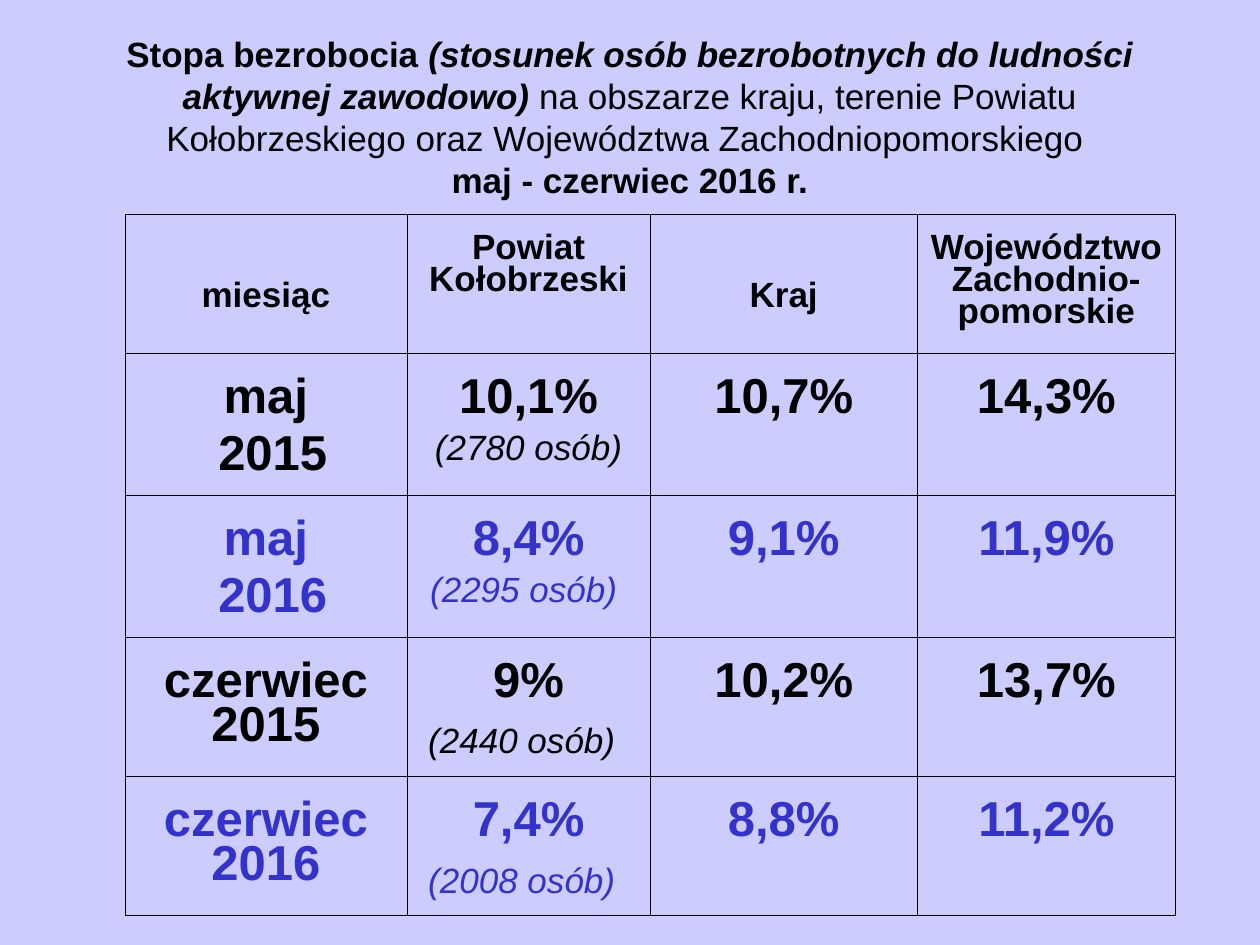
from dataclasses import dataclass

from lxml.etree import SubElement
from pptx import Presentation
from pptx.dml.color import RGBColor
from pptx.enum.text import MSO_ANCHOR, PP_ALIGN
from pptx.oxml.ns import qn
from pptx.util import Inches, Pt


@dataclass(frozen=True)
class Theme:
    font: str = "Arial"
    background: str = "CCCCFF"
    ink: str = "000000"
    accent: str = "3333CC"
    small: int = 20
    large: int = 28
    border: float = 0.25
    line_spacing: float = 0.81


@dataclass(frozen=True)
class Piece:
    text: str
    size: int
    bold: bool = True
    italic: bool = False


THEME = Theme()
WIDTH, HEIGHT = Inches(10), Inches(7.5)
COLUMN_SHARES = [0.224, 0.193, 0.212, 0.205]
ROW_SHARES = [0.147, 0.15, 0.15, 0.141, 0.141]
HEADER_TOP, LOWERED_HEADER_TOP, DATA_TOP = 0.16, 0.54, 0.2

TITLE = [
    Piece("Stopa bezrobocia ", THEME.small),
    Piece("(stosunek osób bezrobotnych do ludności aktywnej zawodowo)",
          THEME.small, italic=True),
    Piece(" na obszarze kraju, terenie Powiatu Kołobrzeskiego oraz "
          "Województwa Zachodniopomorskiego ", THEME.small, bold=False),
]
PERIOD = Piece("maj - czerwiec 2016 r.", THEME.small)

HEADERS = [
    ("miesiąc", LOWERED_HEADER_TOP),
    ("Powiat Kołobrzeski", HEADER_TOP),
    ("Kraj", LOWERED_HEADER_TOP),
    ("Województwo Zachodnio-pomorskie", HEADER_TOP),
]


def figure(text):
    return Piece(text, THEME.large)


def people(text):
    return Piece(text, THEME.small, bold=False, italic=True)


LARGE_SPACE = Piece(" ", THEME.large, bold=False)
MONTHS = [
    (["maj", " 2015"], "10,1%", [people("(2780 osób)")], "10,7%", "14,3%"),
    (["maj", " 2016"], "8,4%", [people("(2295 osób) ")], "9,1%", "11,9%"),
    (["czerwiec 2015"], "9%", [people("(2440 osób)"), LARGE_SPACE], "10,2%", "13,7%"),
    (["czerwiec 2016"], "7,4%", [people("(2008 osób)"), LARGE_SPACE], "8,8%", "11,2%"),
]


def add_piece(paragraph, piece, color):
    run = paragraph.add_run()
    run.text = piece.text
    font = run.font
    font.name, font.size = THEME.font, Pt(piece.size)
    font.bold, font.italic = piece.bold, piece.italic
    font.color.rgb = RGBColor.from_string(color)


def add_title(slide):
    frame = slide.shapes.add_textbox(
        int(WIDTH * 0.05), int(HEIGHT * 0.04), int(WIDTH * 0.9), int(HEIGHT / 6)
    ).text_frame
    frame.word_wrap = True
    frame.vertical_anchor = MSO_ANCHOR.MIDDLE
    paragraph = frame.paragraphs[0]
    paragraph.alignment = PP_ALIGN.CENTER
    for piece in TITLE:
        add_piece(paragraph, piece, THEME.ink)
    paragraph.add_line_break()
    add_piece(paragraph, PERIOD, THEME.ink)


def draw_borders(cell):
    properties = cell._tc.get_or_add_tcPr()
    for position, side in enumerate(("a:lnL", "a:lnR", "a:lnT", "a:lnB")):
        line = SubElement(properties, qn(side), w=str(Pt(THEME.border)))
        fill = SubElement(line, qn("a:solidFill"))
        SubElement(fill, qn("a:srgbClr"), val=THEME.ink)
        properties.insert(position, line)


def fill_cell(cell, lines, color, top, space_before):
    cell.fill.background()
    cell.margin_top = Inches(top)
    draw_borders(cell)
    frame = cell.text_frame
    for index, pieces in enumerate(lines):
        paragraph = frame.add_paragraph() if index else frame.paragraphs[0]
        paragraph.alignment = PP_ALIGN.CENTER
        paragraph.line_spacing = THEME.line_spacing
        paragraph.space_before = Pt(space_before)
        for piece in pieces:
            add_piece(paragraph, piece, color)


def add_rates_table(slide):
    table = slide.shapes.add_table(
        len(ROW_SHARES), len(COLUMN_SHARES),
        int(WIDTH * 0.099), int(HEIGHT * 0.227),
        int(WIDTH * sum(COLUMN_SHARES)), int(HEIGHT * sum(ROW_SHARES)),
    ).table
    table.first_row = table.horz_banding = False
    for column, share in zip(table.columns, COLUMN_SHARES):
        column.width = int(WIDTH * share)
    for row, share in zip(table.rows, ROW_SHARES):
        row.height = int(HEIGHT * share)

    for column, (label, top) in enumerate(HEADERS):
        fill_cell(table.cell(0, column), [[Piece(label, THEME.small)]],
                  THEME.ink, top, space_before=5)

    for row, (month, county, count, country, region) in enumerate(MONTHS, start=1):
        color = THEME.ink if row % 2 else THEME.accent
        contents = [
            [[figure(line)] for line in month],
            [[figure(county)], count],
            [[figure(country)]],
            [[figure(region)]],
        ]
        for column, lines in enumerate(contents):
            fill_cell(table.cell(row, column), lines, color, DATA_TOP, space_before=7)


def main():
    presentation = Presentation()
    presentation.slide_width, presentation.slide_height = WIDTH, HEIGHT
    slide = presentation.slides.add_slide(presentation.slide_layouts[6])
    background = slide.background.fill
    background.solid()
    background.fore_color.rgb = RGBColor.from_string(THEME.background)
    add_title(slide)
    add_rates_table(slide)
    presentation.save("out.pptx")


if __name__ == "__main__":
    main()
